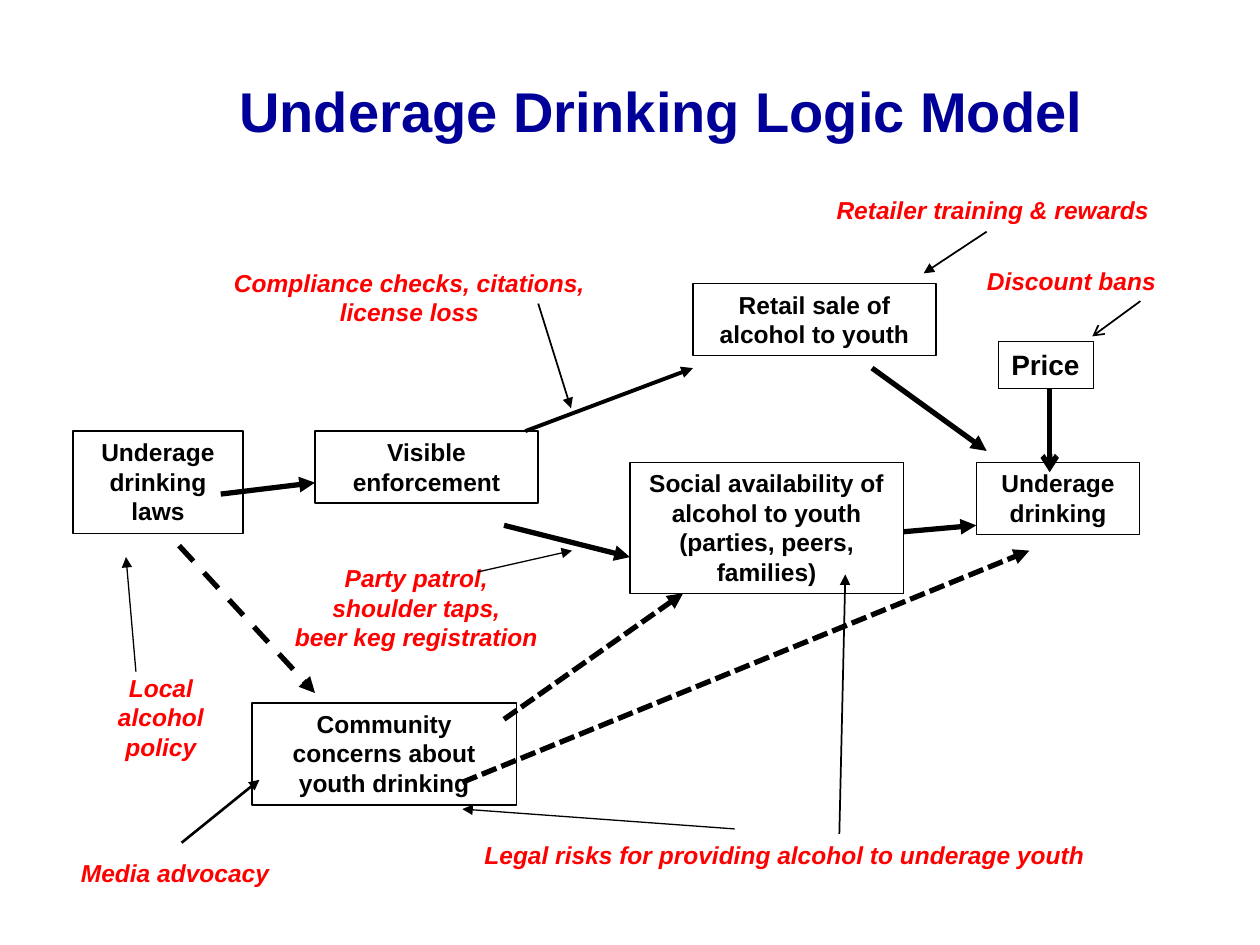
from pptx import Presentation
from pptx.dml.color import RGBColor
from pptx.enum.dml import MSO_LINE_DASH_STYLE as Dash
from pptx.enum.shapes import MSO_CONNECTOR, MSO_SHAPE
from pptx.enum.text import MSO_ANCHOR, MSO_AUTO_SIZE, PP_ALIGN
from pptx.oxml.ns import qn
from pptx.util import Cm, Pt
from lxml.etree import SubElement

NAVY = RGBColor(0x00, 0x00, 0x99)
BLACK = RGBColor(0x00, 0x00, 0x00)
RED = RGBColor(0xFF, 0x00, 0x00)


class Diagram:
    """Holds the style and the slide being drawn."""
    font_name = "Arial"
    text_size = 14

    def __init__(self, slide):
        self.slide = slide

    def set_text(self, frame, text, color, size, italic=False):
        frame.text = text
        for paragraph in frame.paragraphs:
            paragraph.alignment = PP_ALIGN.CENTER
            font = paragraph.font
            font.name, font.size = self.font_name, Pt(size)
            font.bold, font.italic = True, italic
            font.color.rgb = color

    def title(self, text, place):
        shape = self.slide.shapes.title
        shape.left, shape.top, shape.width, shape.height = map(Cm, place)
        shape.text_frame.vertical_anchor = MSO_ANCHOR.MIDDLE
        self.set_text(shape.text_frame, text, NAVY, 32)

    def box(self, text, place, size=text_size, line_width=0.75, wrap=True):
        shape = self.slide.shapes.add_shape(MSO_SHAPE.RECTANGLE, *map(Cm, place))
        shape.shadow.inherit = False
        shape.fill.background()
        shape.line.color.rgb = BLACK
        shape.line.width = Pt(line_width)
        frame = shape.text_frame
        frame.vertical_anchor = MSO_ANCHOR.TOP
        frame.word_wrap = wrap
        frame.auto_size = MSO_AUTO_SIZE.SHAPE_TO_FIT_TEXT
        self.set_text(frame, text, BLACK, size)

    def note(self, text, place, wrap=True):
        frame = self.slide.shapes.add_textbox(*map(Cm, place)).text_frame
        frame.word_wrap = wrap
        frame.auto_size = MSO_AUTO_SIZE.SHAPE_TO_FIT_TEXT
        self.set_text(frame, text, RED, self.text_size, italic=True)

    def arrow(self, start, end, width, dash=None, head="triangle"):
        connector = self.slide.shapes.add_connector(
            MSO_CONNECTOR.STRAIGHT, *map(Cm, start + end))
        line = connector.line
        line.color.rgb = BLACK
        line.width = Pt(width)
        if dash:
            line.dash_style = dash
        properties = connector._element.spPr
        SubElement(properties.find(qn("a:ln")), qn("a:tailEnd"), type=head)
        SubElement(properties, qn("a:effectLst"))


def main():
    presentation = Presentation()
    presentation.slide_width, presentation.slide_height = Cm(25.4), Cm(19.05)
    title_only = presentation.slide_layouts[5]
    diagram = Diagram(presentation.slides.add_slide(title_only))
    diagram.title("Underage Drinking Logic Model", (2.54, 0.64, 21.59, 3.18))

    # Factors
    for text, place in (
        ("Underage drinking", (19.68, 9.32, 3.3, 1.45)),
        ("Social availability of alcohol to youth (parties, peers, families)",
         (12.7, 9.32, 5.51, 2.64)),
        ("Retail sale of alcohol to youth", (13.97, 5.72, 4.9, 1.45)),
        ("Underage drinking laws", (1.47, 8.69, 3.43, 2.06)),
        ("Community concerns about youth drinking", (5.08, 14.17, 5.33, 2.06)),
        ("Visible enforcement", (6.35, 8.69, 4.5, 1.45)),
    ):
        diagram.box(text, place)
    diagram.box("Price", (20.12, 6.88, 1.91, 0.94), size=16, line_width=0.25, wrap=False)

    # Causal paths between factors
    for start, end, width, dash in (
        ((18.21, 10.72), (19.68, 10.59), 3, None),
        ((17.58, 7.42), (19.89, 9.09), 3, None),
        ((10.59, 8.69), (13.97, 7.42), 2.25, None),
        ((10.16, 10.59), (12.7, 11.23), 3, None),
        ((10.16, 14.5), (13.77, 11.96), 3, Dash.SQUARE_DOT),
        ((9.32, 15.77), (20.75, 11.1), 3, Dash.SQUARE_DOT),
        ((4.45, 9.96), (6.35, 9.73), 3, None),
        ((3.61, 11), (6.35, 13.97), 3, Dash.DASH),
    ):
        diagram.arrow(start, end, width, dash)
    diagram.arrow((21.16, 7.82), (21.16, 9.52), 3, head="arrow")

    # Interventions
    for text, place, wrap in (
        ("Compliance checks, citations, license loss", (3.81, 5.28, 8.89, 1.45), True),
        ("Party patrol,\nshoulder taps,\nbeer keg registration",
         (4.65, 11.23, 7.49, 2.64), True),
        ("Legal risks for providing alcohol to underage youth",
         (7.82, 16.81, 16, 0.86), True),
        ("Retailer training & rewards", (15.67, 3.81, 8.69, 0.86), True),
        ("Local alcohol policy", (1.85, 13.44, 2.79, 2.06), True),
        ("Media advocacy", (1.37, 17.17, 4.32, 0.86), False),
        ("Discount bans", (19.63, 5.23, 3.94, 0.86), False),
    ):
        diagram.note(text, place, wrap)

    # Pointers from interventions to what they act on
    for start, end, width in (
        ((10.85, 6.12), (11.51, 8.23), 1),
        ((9.63, 11.53), (11.53, 11.1), 0.75),
        ((14.81, 16.71), (9.32, 16.31), 0.75),
        ((16.92, 16.81), (17.04, 11.58), 1),
        ((19.89, 4.67), (18.62, 5.51), 1),
        ((2.74, 13.54), (2.54, 11.23), 0.75),
        ((3.66, 16.99), (5.23, 15.72), 1.5),
    ):
        diagram.arrow(start, end, width)
    diagram.arrow((22.99, 6.07), (22.02, 6.78), 1, head="arrow")

    presentation.save("out.pptx")


if __name__ == "__main__":
    main()
